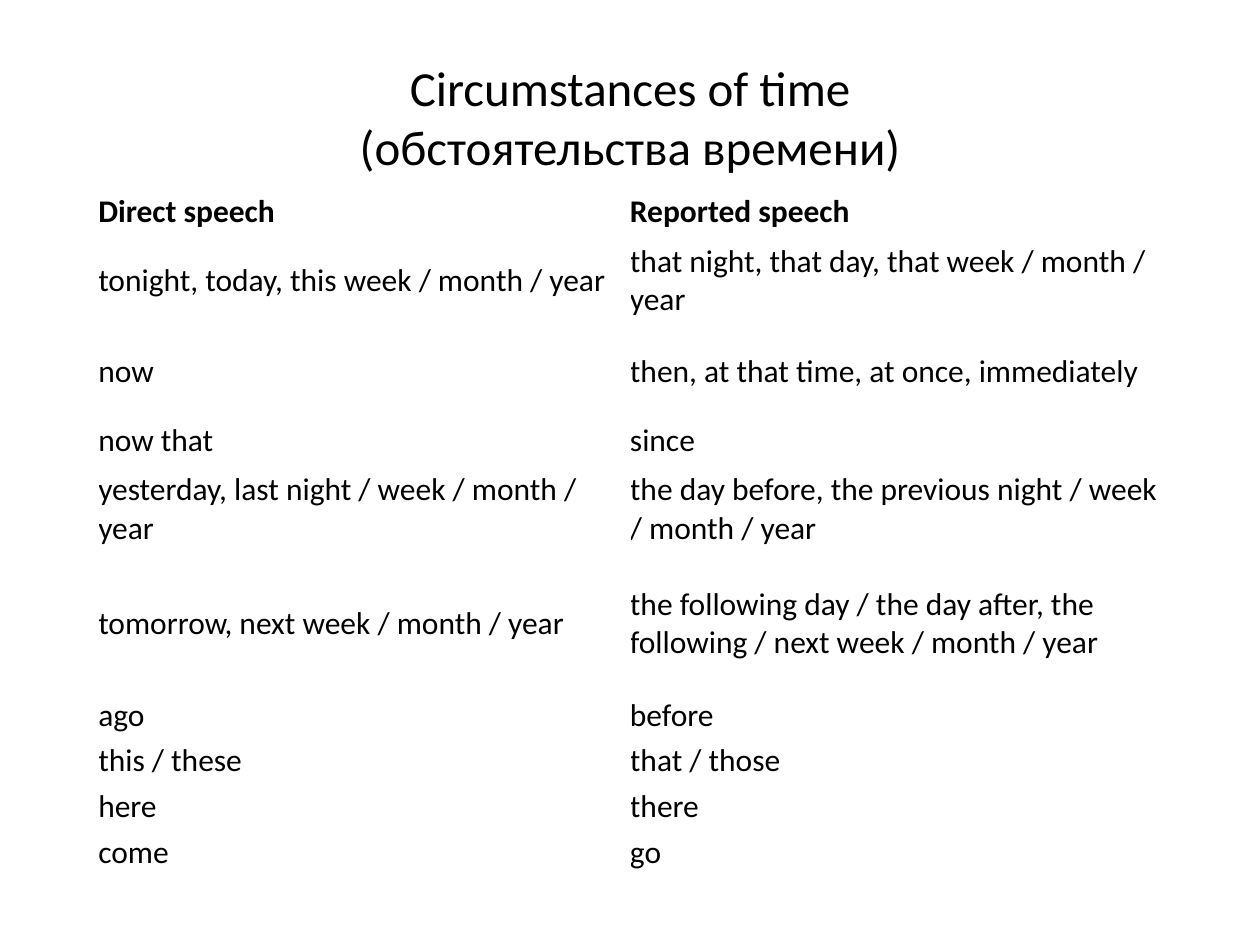
from pptx import Presentation, util as u
from pptx.dml.color import RGBColor
from pptx.enum import text

BLACK = RGBColor(0x00, 0x00, 0x00)
WHITE = RGBColor(0xFF, 0xFF, 0xFF)
LINE = u.Inches(5.45 / 15)  # height of one text line; the rows hold 15 lines

# lines in the row, direct speech, reported speech
PHRASES = [
    (1, "Direct speech", "Reported speech"),
    (2, "tonight, today, this week / month / year",
     "that night, that day, that week / month / year"),
    (2, "now", "then, at that time, at once, immediately"),
    (1, "now that", "since"),
    (2, "yesterday, last night / week / month / year",
     "the day before, the previous night / week / month / year"),
    (3, "tomorrow, next week / month / year",
     "the following day / the day after, the following / next week / month / year"),
    (1, "ago", "before"),
    (1, "this / these", "that / those"),
    (1, "here", "there"),
    (1, "come", "go"),
]


def set_font(paragraph, size, bold):
    font = paragraph.runs[0].font
    for name, value in {"name": "Calibri", "size": u.Pt(size), "bold": bold}.items():
        setattr(font, name, value)
    font.color.rgb = BLACK


deck = Presentation()
deck.slide_width, deck.slide_height = u.Inches(10), u.Inches(7.5)
slide = deck.slides.add_slide(deck.slide_layouts[5])

heading = slide.shapes.title
heading_place = {"left": 0.5, "top": 0.3, "width": 9, "height": 1.25}
for name, inches in heading_place.items():
    setattr(heading, name, u.Inches(inches))
frame = heading.text_frame
frame.vertical_anchor = text.MSO_ANCHOR.MIDDLE
line_1, line_2 = "Сircumstances of time", "(обстоятельства времени)"
paragraph = frame.paragraphs[0]
paragraph.alignment = text.PP_ALIGN.CENTER
paragraph.text = f"{line_1}\v{line_2}"
for run_index in range(len(paragraph.runs)):
    run_font = paragraph.runs[run_index].font
    run_font.name, run_font.size = "Calibri", u.Pt(28)
    run_font.color.rgb = BLACK

speech = slide.shapes.add_table(
    len(PHRASES), 2, u.Inches(0.78), u.Inches(1.5), u.Inches(8.44), 15 * LINE
).table
speech.first_row = speech.horz_banding = False

cell_format = {
    "margin_left": 0, "margin_right": 0, "margin_top": 0, "margin_bottom": 0,
    "vertical_anchor": text.MSO_ANCHOR.MIDDLE,
}
for row, (lines, *phrases) in enumerate(PHRASES):
    speech.rows[row].height = lines * LINE
    for column, phrase in enumerate(phrases):
        cell = speech.cell(row, column)
        for name, value in cell_format.items():
            setattr(cell, name, value)
        cell.fill.solid()
        cell.fill.fore_color.rgb = WHITE
        cell.text = phrase
        set_font(cell.text_frame.paragraphs[0], 18, bold=row == 0)

deck.save("out.pptx")
